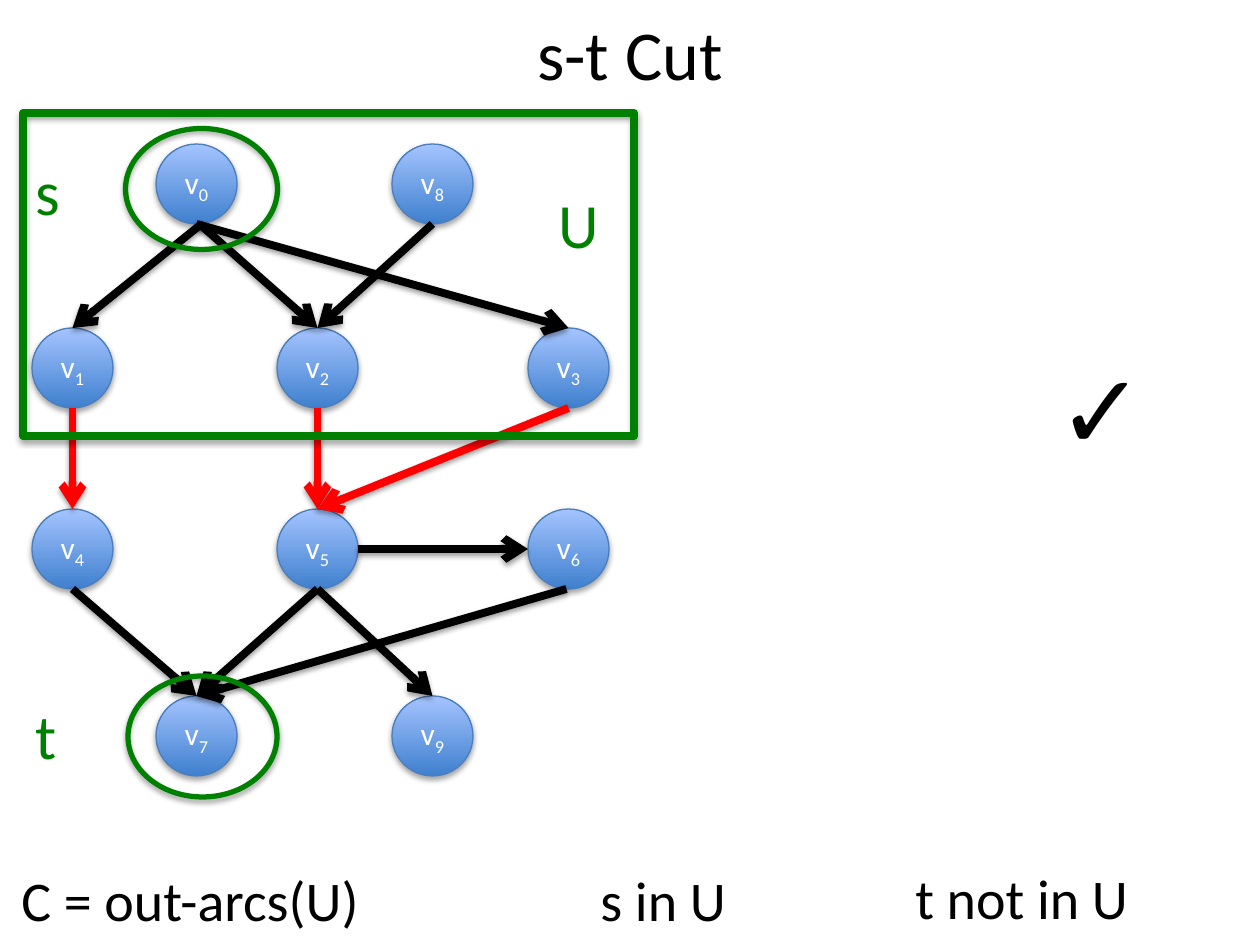
from dataclasses import dataclass

from lxml import etree
from pptx import Presentation
from pptx.dml.color import RGBColor
from pptx.enum.shapes import MSO_CONNECTOR, MSO_SHAPE
from pptx.enum.text import MSO_ANCHOR, MSO_AUTO_SIZE, PP_ALIGN
from pptx.oxml.ns import qn
from pptx.util import Emu, Pt

LINE = MSO_CONNECTOR.STRAIGHT
OVAL, RECT = MSO_SHAPE.OVAL, MSO_SHAPE.RECTANGLE
MIDDLE, CENTER = MSO_ANCHOR.MIDDLE, PP_ALIGN.CENTER
GROW = MSO_AUTO_SIZE.SHAPE_TO_FIT_TEXT
SCALE = 914400 / 126
BLACK, WHITE, GREEN, RED = "000000", "FFFFFF", "008000", "FF0000"
WIDE, HIGH = 81, 80
ROWS = (144, 328, 509, 696)
OUTER = (32, 277, 528)
INNER = (156, 392)
CUT = (1, 2, 3)


@dataclass(frozen=True)
class Node:
    num: int
    left: int
    top: int


@dataclass(frozen=True)
class Arc:
    start: int
    end: int
    shift: int = 0
    level: bool = False


@dataclass(frozen=True)
class Frame:
    kind: int
    left: int
    top: int
    width: int
    height: int
    line: float
    turn: int = 0


@dataclass(frozen=True)
class Label:
    text: str
    left: int
    top: int
    width: int
    height: int
    size: int
    color: str = BLACK
    font: str = "Calibri"
    wrap: bool = False


NODES = (
    Node(8, INNER[1], ROWS[0]),
    Node(0, INNER[0], ROWS[0]),
    *(Node(1 + i, x, ROWS[1]) for i, x in enumerate(OUTER)),
    *(Node(4 + i, x, ROWS[2]) for i, x in enumerate(OUTER)),
    Node(9, INNER[1], ROWS[3]),
    Node(7, INNER[0], ROWS[3]),
)
ARCS = (
    Arc(0, 1, 5), Arc(1, 4), Arc(4, 7), Arc(0, 2, 3), Arc(2, 5), Arc(5, 7),
    Arc(5, 6, level=True), Arc(8, 2), Arc(0, 3), Arc(6, 7, -2), Arc(3, 5),
    Arc(5, 9),
)
FRAMES = (
    Frame(OVAL, 142, 662, 121, 149, 3, 90),
    Frame(OVAL, 141, 113, 121, 152, 3, 90),
    Frame(RECT, 23, 113, 611, 323, 4.5),
)
LABELS = (
    Label("t", 23, 690, 174, 89, 36, GREEN, wrap=True),
    Label("s", 23, 146, 174, 89, 36, GREEN, wrap=True),
    Label("C = out-arcs(U)", 9, 859, 413, 81, 32),
    Label("s in U", 588, 859, 170, 81, 32),
    Label("t not in U", 903, 857, 252, 81, 32),
    Label("✓", 1045, 338, 106, 140, 60, font="Arial"),
    Label("U", 546, 179, 174, 89, 36, GREEN, wrap=True),
)


def px(*sizes: int) -> list[Emu]:
    return [Emu(round(size * SCALE)) for size in sizes]


def rgb(color: str) -> RGBColor:
    return RGBColor.from_string(color)


def style(para, size: int, color: str, font: str = "Calibri") -> None:
    para.font.size = Pt(size)
    para.font.name = font
    para.font.color.rgb = rgb(color)


def shade(shape, drop: int, alpha: int) -> None:
    effects = etree.SubElement(shape.element.spPr, qn("a:effectLst"))
    outer = etree.SubElement(
        effects, qn("a:outerShdw"), blurRad="40000", dist=str(drop),
        dir="5400000", rotWithShape="0")
    color = etree.SubElement(outer, qn("a:srgbClr"), val=BLACK)
    etree.SubElement(color, qn("a:alpha"), val=str(alpha * 1000))


def stroke(shape, color: str, width: float) -> None:
    shape.line.color.rgb = rgb(color)
    shape.line.width = Pt(width)


def draw_node(shapes, node: Node):
    disc = shapes.add_shape(OVAL, *px(node.left, node.top, WIDE, HIGH))
    disc.fill.gradient()
    disc.fill.gradient_angle = 90
    for stop, color in zip(disc.fill.gradient_stops, ("3F80CE", "A4C4FF")):
        stop.color.rgb = rgb(color)
    stroke(disc, "4B7EBC", 0.75)
    shade(disc, 23000, 35)
    disc.text_frame.vertical_anchor = MIDDLE
    para = disc.text_frame.paragraphs[0]
    para.alignment = CENTER
    style(para, 18, WHITE)
    para.add_run().text = "v"
    run = para.add_run()
    run.text = str(node.num)
    run.font._element.set("baseline", "-25000")
    return disc


def draw_arc(shapes, arc: Arc, discs: dict) -> None:
    start, end = discs[arc.start], discs[arc.end]
    if arc.level:
        mid = start.top + start.height // 2
        points = (start.left + start.width, mid, end.left, mid)
    else:
        x = start.left + start.width // 2 + px(arc.shift)[0]
        points = (x, start.top + start.height,
                  end.left + end.width // 2, end.top)
    line = shapes.add_connector(LINE, *points)
    if not arc.level:
        line.end_connect(end, 0)
    stroke(line, RED if arc.start in CUT else BLACK, 4.5)
    etree.SubElement(line.element.spPr.find(qn("a:ln")),
                     qn("a:tailEnd"), type="arrow")
    shade(line, 20000, 38)


def draw_frame(shapes, frame: Frame) -> None:
    shape = shapes.add_shape(
        frame.kind, *px(frame.left, frame.top, frame.width, frame.height))
    shape.rotation = frame.turn
    shape.fill.background()
    stroke(shape, GREEN, frame.line)
    shade(shape, 23000, 35)


def draw_label(shapes, label: Label) -> None:
    box = shapes.add_textbox(
        *px(label.left, label.top, label.width, label.height))
    box.text_frame.word_wrap = label.wrap
    box.text_frame.auto_size = GROW
    para = box.text_frame.paragraphs[0]
    para.text = label.text
    style(para, label.size, label.color, label.font)


def draw_title(title, text: str) -> None:
    title.left, title.top, title.width, title.height = px(63, 8, 1134, 89)
    title.text_frame.text = text
    title.text_frame.vertical_anchor = MIDDLE
    para = title.text_frame.paragraphs[0]
    para.alignment = CENTER
    style(para, 40, BLACK)


def main() -> None:
    deck = Presentation()
    deck.slide_width, deck.slide_height = px(1260, 945)
    shapes = deck.slides.add_slide(deck.slide_layouts[5]).shapes
    draw_title(shapes.title, "s-t Cut")
    discs = {node.num: draw_node(shapes, node) for node in NODES}
    for arc in ARCS:
        draw_arc(shapes, arc, discs)
    for frame in FRAMES:
        draw_frame(shapes, frame)
    for label in LABELS:
        draw_label(shapes, label)
    deck.save("out.pptx")


if __name__ == "__main__":
    main()
